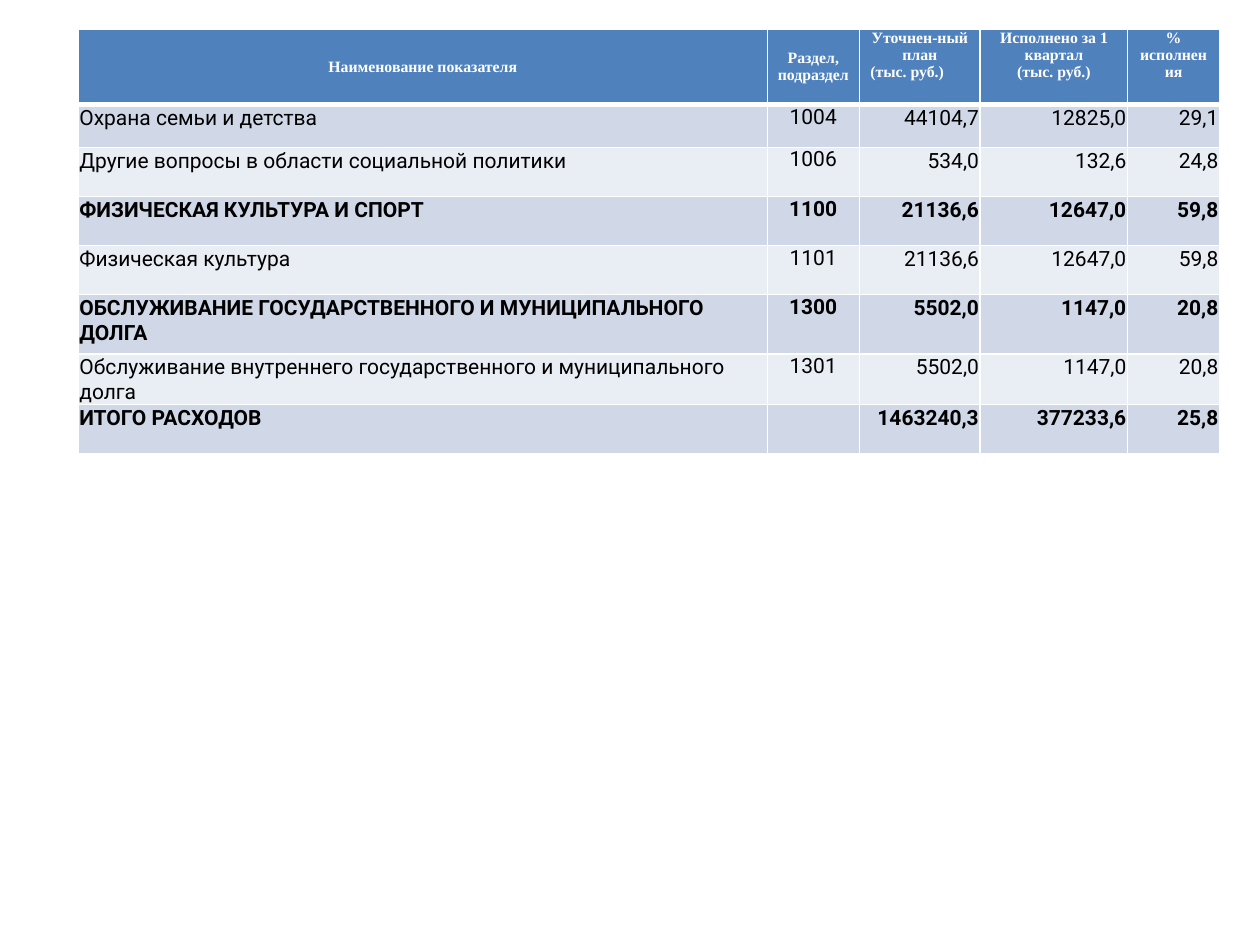
import lxml.etree
import pptx
import pptx.dml.color
import pptx.enum.text
import pptx.oxml.ns
import pptx.util

ALIGN = pptx.enum.text.PP_ALIGN
ANCHOR = pptx.enum.text.MSO_ANCHOR
COLUMN_WIDTHS = [5.47, 0.73, 0.96, 1.17, 0.73]
ROW_HEIGHTS = [0.6, 0.34, 0.39, 0.39, 0.39, 0.47, 0.39, 0.39]
HEADINGS = [
    "Наименование показателя",
    "Раздел, подраздел",
    "Уточнен-ный план\n(тыс. руб.)",
    "Исполнено за 1 квартал\n(тыс. руб.)",
    "% исполнения",
]
EXPENSES = [
    ("Охрана семьи и детства", "1004", "44104,7", "12825,0", "29,1"),
    ("Другие вопросы в области социальной политики", "1006", "534,0", "132,6", "24,8"),
    ("ФИЗИЧЕСКАЯ КУЛЬТУРА И СПОРТ", "1100", "21136,6", "12647,0", "59,8"),
    ("Физическая культура", "1101", "21136,6", "12647,0", "59,8"),
    ("ОБСЛУЖИВАНИЕ ГОСУДАРСТВЕННОГО И МУНИЦИПАЛЬНОГО ДОЛГА", "1300", "5502,0", "1147,0", "20,8"),
    ("Обслуживание внутреннего государственного и муниципального долга", "1301", "5502,0", "1147,0", "20,8"),
    ("ИТОГО РАСХОДОВ", "", "1463240,3", "377233,6", "25,8"),
]
BODY_ALIGN = [ALIGN.LEFT, ALIGN.CENTER, ALIGN.RIGHT, ALIGN.RIGHT, ALIGN.RIGHT]
BAND_FILLS = ["D0D8E8", "E9EDF4"]
HEADING_FONT = {"name": "Times New Roman", "size": pptx.util.Pt(9), "bold": True}
BODY_FONT = {"name": "Roboto", "size": pptx.util.Pt(12)}


def color(hex_value):
    """Turn a hex string into a colour."""
    return pptx.dml.color.RGBColor.from_string(hex_value)


def apply_format(target, values):
    """Set each named attribute on the target."""
    for name, value in values.items():
        setattr(target, name, value)


def margins(side, top):
    """Give cell margins with no space at the bottom."""
    inches = pptx.util.Inches
    return {"margin_left": inches(side), "margin_right": inches(side),
            "margin_top": inches(top), "margin_bottom": 0}


def draw_borders(cell, top, bottom):
    """Outline a cell in white with the given top and bottom widths."""
    properties = cell._tc.get_or_add_tcPr()
    for side, width in {"lnL": 1, "lnR": 1, "lnT": top, "lnB": bottom}.items():
        line = lxml.etree.SubElement(properties, pptx.oxml.ns.qn(f"a:{side}"), w=str(pptx.util.Pt(width)))
        fill = lxml.etree.SubElement(line, pptx.oxml.ns.qn("a:solidFill"))
        lxml.etree.SubElement(fill, pptx.oxml.ns.qn("a:srgbClr"), val="FFFFFF")


def fill_cell(cell, wording, layout, align, font, ink, background):
    """Write formatted wording on a coloured cell."""
    apply_format(cell, layout)
    cell.fill.solid()
    cell.fill.fore_color.rgb = color(background)
    cell.text = wording
    for paragraph in cell.text_frame.paragraphs:
        paragraph.alignment = align
        for part in [*paragraph.runs, paragraph]:
            apply_format(part.font, font)
            part.font.color.rgb = color(ink)


def add_headings(table):
    """Fill the heading row."""
    for column, heading in enumerate(HEADINGS):
        cell = table.cell(0, column)
        draw_borders(cell, 1, 3)
        anchor = ANCHOR.MIDDLE if column < 2 else ANCHOR.TOP
        layout = margins(0.07, 0) | {"vertical_anchor": anchor}
        fill_cell(cell, heading, layout, ALIGN.CENTER, HEADING_FONT, "FFFFFF", "4F81BD")
    plan_unit = table.cell(0, 2).text_frame.paragraphs[1]
    plan_unit._p.get_or_add_pPr().set("marR", str(pptx.util.Inches(0.2)))


def add_expenses(table):
    """Fill the banded rows, with sections in bold."""
    for row, expense in enumerate(EXPENSES, start=1):
        font = BODY_FONT | {"bold": expense[0].isupper()}
        for column, wording in enumerate(expense):
            cell = table.cell(row, column)
            draw_borders(cell, 3 if row == 1 else 1, 1)
            layout = margins(0.07, 0) if column == 1 else margins(0.01, 0.01)
            fill_cell(cell, wording, layout, BODY_ALIGN[column], font, "000000", BAND_FILLS[(row - 1) % 2])


def add_budget_table(slide):
    """Place the table grid on the slide."""
    frame = slide.shapes.add_table(
        len(ROW_HEIGHTS), len(COLUMN_WIDTHS), pptx.util.Inches(0.62), pptx.util.Inches(0.23),
        pptx.util.Inches(sum(COLUMN_WIDTHS)), pptx.util.Inches(sum(ROW_HEIGHTS)))
    table = frame.table
    for column, width in zip(table.columns, COLUMN_WIDTHS):
        column.width = pptx.util.Inches(width)
    for row, height in zip(table.rows, ROW_HEIGHTS):
        row.height = pptx.util.Inches(height)
    return table


def main():
    """Build and save the slide."""
    deck = pptx.Presentation()
    apply_format(deck, {"slide_width": pptx.util.Inches(10), "slide_height": pptx.util.Inches(7.5)})
    slide = deck.slides.add_slide(deck.slide_layouts[6])
    table = add_budget_table(slide)
    add_headings(table)
    add_expenses(table)
    deck.save("out.pptx")


if __name__ == "__main__":
    main()
